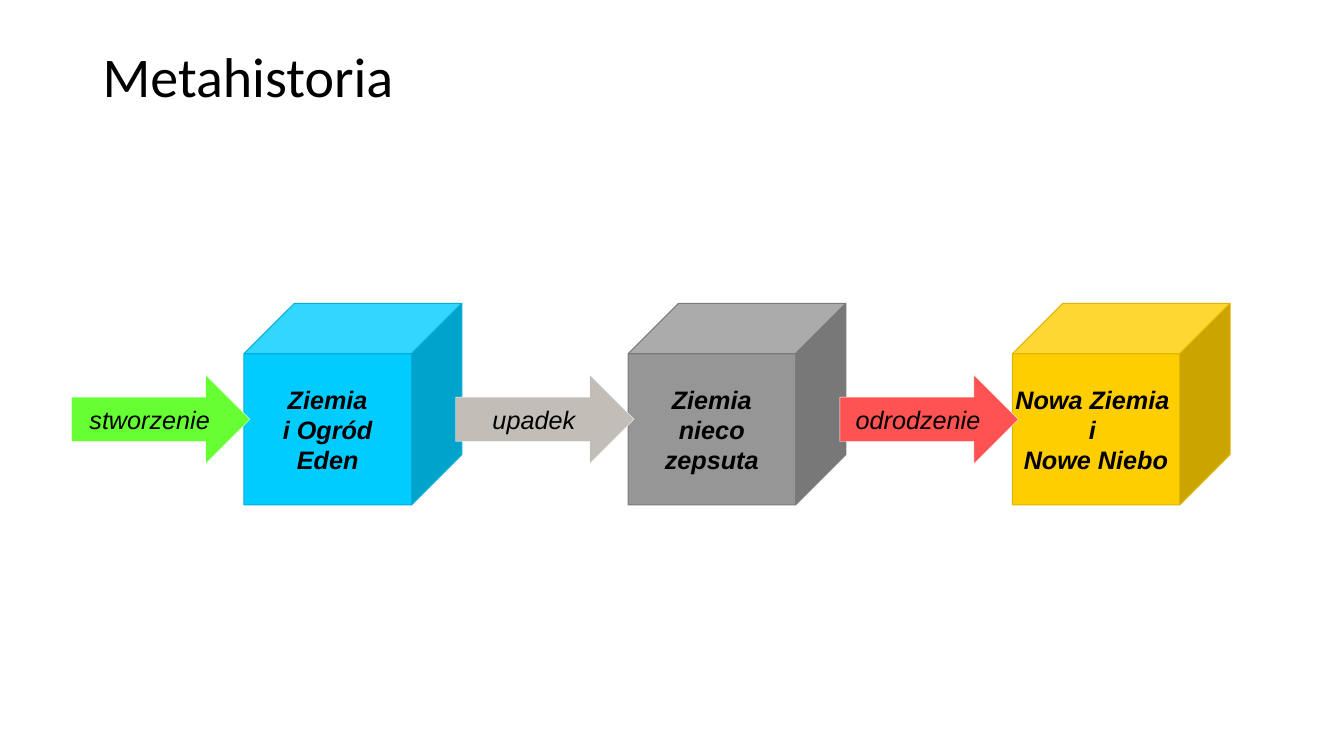
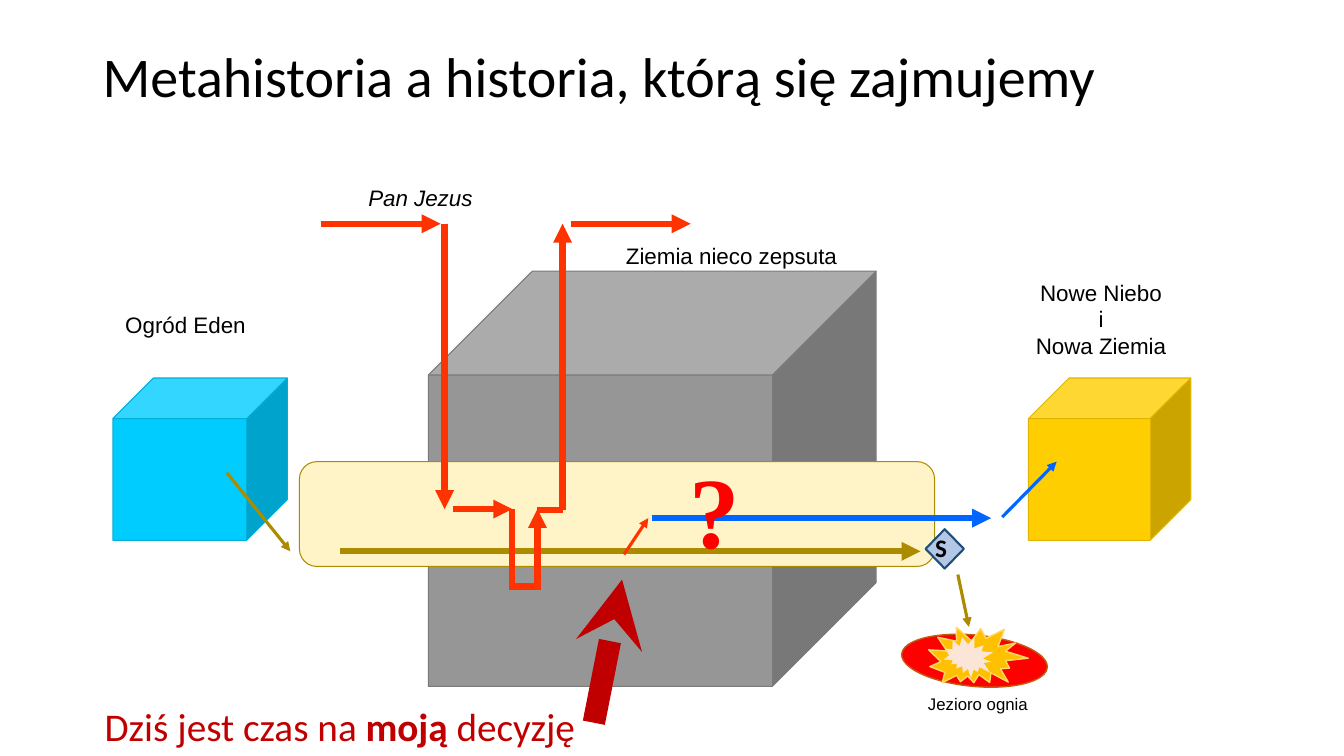
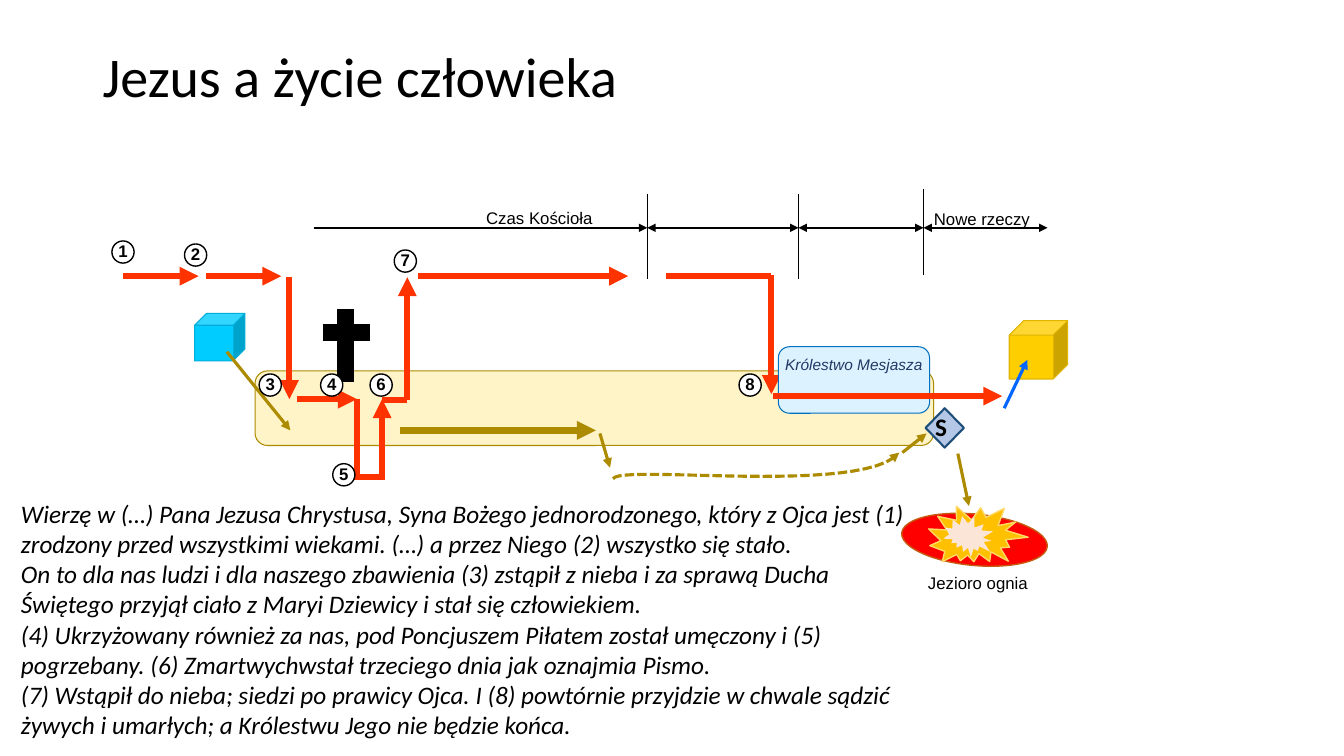
from lxml.etree import SubElement
from pptx import Presentation
from pptx.dml.color import RGBColor
from pptx.enum.dml import MSO_LINE
from pptx.enum.shapes import MSO_CONNECTOR, MSO_SHAPE as SHAPE
from pptx.enum.text import MSO_ANCHOR as ANCHOR, PP_ALIGN as ALIGN
from pptx.oxml.ns import qn
from pptx.util import Inches, Pt

BLACK = RGBColor(0x00, 0x00, 0x00)
WHITE = RGBColor(0xFF, 0xFF, 0xFF)
RED = RGBColor(0xFF, 0x00, 0x00)
DARK_RED = RGBColor(0xC0, 0x00, 0x00)
JESUS_RED = RGBColor(0xFF, 0x33, 0x00)
FALL_OLIVE = RGBColor(0xAD, 0x8B, 0x00)
HEAVEN_BLUE = RGBColor(0x00, 0x66, 0xFF)
LIFE_CREAM = RGBColor(0xFF, 0xF4, 0xC7)
KINGDOM_FILL = RGBColor(0xDD, 0xF2, 0xFF)
KINGDOM_LINE = RGBColor(0x00, 0x70, 0xC0)
KINGDOM_TEXT = RGBColor(0x20, 0x38, 0x64)
COURT_FILL = RGBColor(0xB4, 0xC7, 0xE7)
COURT_LINE = RGBColor(0x1F, 0x4E, 0x79)
LAKE_LINE = RGBColor(0xC5, 0x5A, 0x11)
FLAME = RGBColor(0xFF, 0xC0, 0x00)
FLAME_LINE = RGBColor(0xFF, 0xD9, 0x66)
FLAME_CORE = RGBColor(0xFB, 0xE5, 0xD6)
CREATION_GREEN = RGBColor(0x66, 0xFF, 0x33)
DECLINE_GRAY = RGBColor(0xC2, 0xBD, 0xB6)
REBIRTH_RED = RGBColor(0xFF, 0x53, 0x53)

EDEN = (RGBColor(0x00, 0xCC, 0xFF), RGBColor(0x00, 0xAE, 0xD8))
EARTH = (RGBColor(0x96, 0x96, 0x96), RGBColor(0x7A, 0x7A, 0x7A))
HEAVEN = (RGBColor(0xFF, 0xCE, 0x00), RGBColor(0xE0, 0xB4, 0x00))

CREED = (
    "Wierzę w (…) Pana Jezusa Chrystusa, Syna Bożego jednorodzonego, który z Ojca jest (1) "
    "zrodzony przed wszystkimi wiekami. (…) a przez Niego (2) wszystko się stało.\n"
    "On to dla nas ludzi i dla naszego zbawienia (3) zstąpił z nieba i za sprawą Ducha "
    "Świętego przyjął ciało z Maryi Dziewicy i stał się człowiekiem.\n"
    "(4) Ukrzyżowany również za nas, pod Poncjuszem Piłatem został umęczony i (5) "
    "pogrzebany. (6) Zmartwychwstał trzeciego dnia jak oznajmia Pismo.\n"
    "(7) Wstąpił do nieba; siedzi po prawicy Ojca. I (8) powtórnie przyjdzie w chwale sądzić "
    "żywych i umarłych; a Królestwu Jego nie będzie końca."
)


def write(box, text, size, font="Arial", color=BLACK, bold=False, italic=False,
          align=ALIGN.CENTER, anchor=ANCHOR.MIDDLE, inset=(0.1, 0.05), wrap=True, spacing=1.0):
    """Fill a box with evenly styled text."""
    frame = box.text_frame
    frame.word_wrap = wrap
    frame.vertical_anchor = anchor
    frame.margin_left = frame.margin_right = Inches(inset[0])
    frame.margin_top = frame.margin_bottom = Inches(inset[1])
    frame.text = text
    for para in frame.paragraphs:
        para.alignment = align
        para.line_spacing = spacing
        para.font.size = Pt(size)
        para.font.name = font
        para.font.color.rgb = color
        para.font.bold = bold
        para.font.italic = italic


def add_text(page, left, top, width, height, text, size, **style):
    """Add a text box."""
    box = page.shapes.add_textbox(Inches(left), Inches(top), Inches(width), Inches(height))
    write(box, text, size, **style)
    return box


def add_caption(page, left, top, width, height, text, size=16, italic=False):
    """Add a centred label with narrow margins."""
    add_text(page, left, top, width, height, text, size, italic=italic, inset=(0.03, 0.03))


def add_figure(page, kind, left, top, width, height, fill, line=None, weight=0.75, turn=0):
    """Add a flat preset shape."""
    shape = page.shapes.add_shape(kind, Inches(left), Inches(top), Inches(width), Inches(height))
    shape.shadow.inherit = False
    shape.fill.solid()
    shape.fill.fore_color.rgb = fill
    if line is None:
        shape.line.fill.background()
    else:
        shape.line.color.rgb = line
        shape.line.width = Pt(weight)
    shape.rotation = turn
    return shape


def style_stroke(stroke, color, weight, head=None, tail=None):
    """Set colour, width and arrowheads of a line."""
    stroke.line.color.rgb = color
    stroke.line.width = Pt(weight)
    outline = stroke._element.spPr.find(qn("a:ln"))
    for tag, tip in (("a:headEnd", head), ("a:tailEnd", tail)):
        if tip:
            SubElement(outline, qn(tag)).set("type", tip)


def add_line(page, start, end, color, weight, head=None, tail=None):
    """Add a straight line without a shadow."""
    stroke = page.shapes.add_connector(
        MSO_CONNECTOR.STRAIGHT, *(Inches(value) for value in (*start, *end)))
    style_stroke(stroke, color, weight, head, tail)
    SubElement(stroke._element.spPr, qn("a:effectLst"))


def add_arrow(page, start, end, color=JESUS_RED, weight=4.5, tail="triangle"):
    """Add a line with an arrowhead at its end."""
    add_line(page, start, end, color, weight, tail=tail)


def add_dashed_curve(page, start, first, second, end, steps=24):
    """Add a dashed cubic curve with an arrowhead."""
    def point(share):
        rest = 1 - share
        weights = (rest ** 3, 3 * rest ** 2 * share, 3 * rest * share ** 2, share ** 3)
        return tuple(
            Inches(sum(weight * knot[axis] for weight, knot
                       in zip(weights, (start, first, second, end))))
            for axis in (0, 1))

    builder = page.shapes.build_freeform(*point(0), scale=1.0)
    builder.add_line_segments([point(step / steps) for step in range(1, steps + 1)], close=False)
    curve = builder.convert_to_shape()
    curve.shadow.inherit = False
    curve.fill.background()
    curve.line.dash_style = MSO_LINE.SQUARE_DOT
    style_stroke(curve, FALL_OLIVE, 2.25, tail="triangle")


def add_page(deck, title):
    """Add a blank page with its title."""
    page = deck.slides.add_slide(deck.slide_layouts[6])
    add_text(page, 0.92, 0.4, 11.5, 0.78, title, 40, font="Calibri", align=ALIGN.LEFT, spacing=0.9)
    return page


def add_cube(page, left, top, width, height, colors):
    """Add a cube that stands for a world."""
    return add_figure(page, SHAPE.CUBE, left, top, width, height, *colors)


def add_life_band(page, left, top, width, height):
    """Add the cream band of human life."""
    add_figure(page, SHAPE.ROUNDED_RECTANGLE, left, top, width, height, LIFE_CREAM, FALL_OLIVE)


def add_expulsion(page, left, top):
    """Add the arrow that leads out of Eden."""
    add_arrow(page, (left, top), (left + 0.63, top + 0.78), FALL_OLIVE, 2.25)


def add_judgement(page, left, top):
    """Add the judgement diamond and the lake of fire below it."""
    court = add_figure(page, SHAPE.DIAMOND, left + 0.24, top, 0.38, 0.39,
                       COURT_FILL, COURT_LINE, 1.5)
    write(court, "S", 18, font="Calibri", bold=True, align=ALIGN.LEFT, inset=(0, 0.04), spacing=0.9)
    add_arrow(page, (left + 0.56, top + 0.45), (left + 0.67, top + 0.97), FALL_OLIVE, 2.25)
    add_figure(page, SHAPE.FLOWCHART_CONNECTOR, left, top + 1.05, 1.45, 0.51,
               RED, LAKE_LINE, 1, 5.4)
    add_figure(page, SHAPE.EXPLOSION2, left + 0.27, top + 0.93, 0.97, 0.68,
               FLAME, FLAME_LINE, 1, 16.2)
    add_figure(page, SHAPE.EXPLOSION2, left + 0.44, top + 1.05, 0.47, 0.45, FLAME_CORE, turn=56.2)
    add_caption(page, left + 0.04, top + 1.6, 1.44, 0.26, "Jezioro ognia", 12)


def add_passion(page, left, sky, ground):
    """Add the path of descent, death, resurrection and ascension."""
    cross, risen, ascent = left + 0.67, left + 0.92, left + 1.17
    grave = ground + 0.77
    add_arrow(page, (left, sky), (left, ground))
    add_arrow(page, (left + 0.08, ground), (cross, ground))
    add_line(page, (cross, ground), (cross, grave + 0.03), JESUS_RED, 4.5)
    add_line(page, (cross, grave), (risen, grave), JESUS_RED, 4.5)
    add_arrow(page, (risen, grave + 0.03), (risen, ground))
    add_line(page, (risen, ground + 0.01), (ascent, ground + 0.01), JESUS_RED, 4.5)
    add_arrow(page, (ascent, ground + 0.01), (ascent, sky))


def add_timeline(page, left, top):
    """Add the axis of ages with its dividers and labels."""
    marks = [left + offset for offset in (3.31, 4.81, 6.05, 7.28)]
    add_line(page, (left, top), (marks[0], top), BLACK, 1.5, tail="triangle")
    for start, end in zip(marks, marks[1:]):
        add_line(page, (start, top), (end, top), BLACK, 1.5, "triangle", "triangle")
    for mark, rise in zip(marks, (0.34, 0.34, 0.38)):
        add_line(page, (mark, top - rise), (mark, top - rise + 0.85), BLACK, 0.5)
    add_caption(page, left + 1.52, top - 0.23, 1.44, 0.26, "Czas Kościoła", 12)
    add_caption(page, marks[2], top - 0.22, 1.16, 0.26, "Nowe rzeczy", 12)


def add_cross(page, left, top):
    """Add the black cross."""
    add_line(page, (left, top + 0.23), (left + 0.47, top + 0.23), BLACK, 12)
    add_line(page, (left + 0.23, top + 0.72), (left + 0.23, top), BLACK, 12)


def add_badges(page, places):
    """Add circles numbered in order at the given places."""
    for number, (left, top) in enumerate(places, 1):
        badge = add_figure(page, SHAPE.OVAL, left, top, 0.22, 0.22, WHITE, BLACK, 1)
        write(badge, str(number), 12, bold=True, wrap=False, spacing=0.9)


def build_metahistory(deck):
    """Build the chain of three worlds."""
    page = add_page(deck, "Metahistoria")
    stages = (
        ("stworzenie", CREATION_GREEN, "Ziemia\ni Ogród\vEden", EDEN),
        ("upadek", DECLINE_GRAY, "Ziemia\vnieco\vzepsuta", EARTH),
        ("odrodzenie", REBIRTH_RED, "Nowa Ziemia \ni \nNowe Niebo", HEAVEN),
    )
    for index, (event, color, world, colors) in enumerate(stages):
        left = 0.71 + 3.81 * index
        cube = add_cube(page, left + 1.71, 3.01, 2.16, 2, colors)
        write(cube, world, 18, bold=True, italic=True, wrap=False)
        arrow = add_figure(page, SHAPE.RIGHT_ARROW, left, 3.72, 1.77, 0.88, color, WHITE, 0.25)
        write(arrow, event, 18, italic=True, wrap=False)


def build_history(deck):
    """Build the page on history inside metahistory."""
    page = add_page(deck, "Metahistoria a historia, którą się zajmujemy")
    add_cube(page, 4.25, 2.69, 4.44, 4.12, EARTH)
    add_life_band(page, 2.97, 4.58, 6.3, 1.04)
    add_arrow(page, (3.37, 5.47), (9.13, 5.47), FALL_OLIVE)
    add_arrow(page, (6.47, 5.14), (9.83, 5.14), HEAVEN_BLUE)
    add_judgement(page, 8.94, 5.25)
    add_cube(page, 10.2, 3.75, 1.61, 1.61, HEAVEN)
    add_arrow(page, (9.94, 5.13), (10.48, 4.58), HEAVEN_BLUE, 2.25)
    add_cube(page, 1.12, 3.75, 1.73, 1.61, EDEN)
    add_expulsion(page, 2.25, 4.69)
    add_caption(page, 10.2, 2.73, 1.44, 0.87, "Nowe Niebo\vi\vNowa Ziemia")
    add_caption(page, 1.12, 3.06, 1.44, 0.33, "Ogród Eden")
    add_caption(page, 3.45, 1.8, 1.44, 0.33, "Pan Jezus", italic=True)
    add_caption(page, 6.11, 2.37, 2.29, 0.33, "Ziemia nieco zepsuta")
    add_text(page, 6.74, 4.39, 0.73, 1.31, "?", 72, font="Times New Roman", color=RED, bold=True,
             align=ALIGN.LEFT, anchor=ANCHOR.TOP)
    add_passion(page, 4.41, 2.22, 5.05)
    for left in (3.18, 5.66):
        add_arrow(page, (left, 2.22), (left + 1.19, 2.22))
    add_arrow(page, (6.19, 5.5), (6.43, 5.14), weight=2.25)
    appeal = add_text(page, 0.94, 6.92, 4.96, 0.57, "Dziś jest czas na ", 28, font="Calibri",
                      color=DARK_RED, align=ALIGN.LEFT, anchor=ANCHOR.TOP)
    for words, bold in (("moją", True), (" decyzję", False)):
        span = appeal.text_frame.paragraphs[0].add_run()
        span.text = words
        span.font.bold = bold
    add_arrow(page, (5.89, 7.17), (6.17, 5.75), DARK_RED, 16, "stealth")


def build_jesus_and_life(deck):
    """Build the page that links the creed with human life."""
    page = add_page(deck, "Jezus a życie człowieka")
    add_life_band(page, 2.53, 3.68, 6.73, 0.74)
    add_arrow(page, (3.97, 4.27), (5.91, 4.27), FALL_OLIVE)
    add_timeline(page, 3.11, 2.26)
    add_arrow(page, (5.95, 4.3), (6.05, 4.64), FALL_OLIVE, 2.25)
    add_dashed_curve(page, (6.08, 4.75), (6.15, 4.6), (8.57, 4.92), (8.92, 4.49))
    add_arrow(page, (8.95, 4.49), (9.19, 4.3), FALL_OLIVE, 2.25)
    add_judgement(page, 8.94, 4.05)
    add_cube(page, 10.01, 3.18, 0.58, 0.58, HEAVEN)
    add_arrow(page, (9.96, 4.05), (10.19, 3.57), HEAVEN_BLUE, 2.25)
    add_cube(page, 1.93, 3.11, 0.5, 0.47, EDEN)
    add_expulsion(page, 2.25, 3.49)
    add_text(page, 0.11, 4.89, 9.1, 2.52, CREED, 18, font="Calibri", italic=True,
             align=ALIGN.LEFT, anchor=ANCHOR.TOP)
    for start, end in ((1.22, 1.97), (2.04, 2.79), (4.15, 6.23)):
        add_arrow(page, (start, 2.74), (end, 2.74))
    add_line(page, (6.61, 2.74), (7.65, 2.74), JESUS_RED, 4.5)
    add_arrow(page, (7.65, 2.73), (7.65, 3.91))
    kingdom = add_figure(page, SHAPE.ROUNDED_RECTANGLE, 7.72, 3.44, 1.5, 0.66,
                         KINGDOM_FILL, KINGDOM_LINE)
    write(kingdom, "Królestwo Mesjasza", 11, color=KINGDOM_TEXT, italic=True,
          anchor=ANCHOR.TOP, wrap=False)
    add_arrow(page, (7.67, 3.93), (9.94, 3.93))
    add_passion(page, 2.87, 2.75, 3.96)
    add_cross(page, 3.2, 3.07)
    add_badges(page, ((1.11, 2.39), (1.83, 2.42), (2.57, 3.71), (3.18, 3.71),
                      (3.3, 4.6), (3.67, 3.71), (3.91, 2.48), (7.33, 3.71)))


def main():
    """Build and save the deck."""
    deck = Presentation()
    deck.slide_width = Inches(13.33)
    deck.slide_height = Inches(7.5)
    build_metahistory(deck)
    build_history(deck)
    build_jesus_and_life(deck)
    deck.save("out.pptx")


if __name__ == "__main__":
    main()
